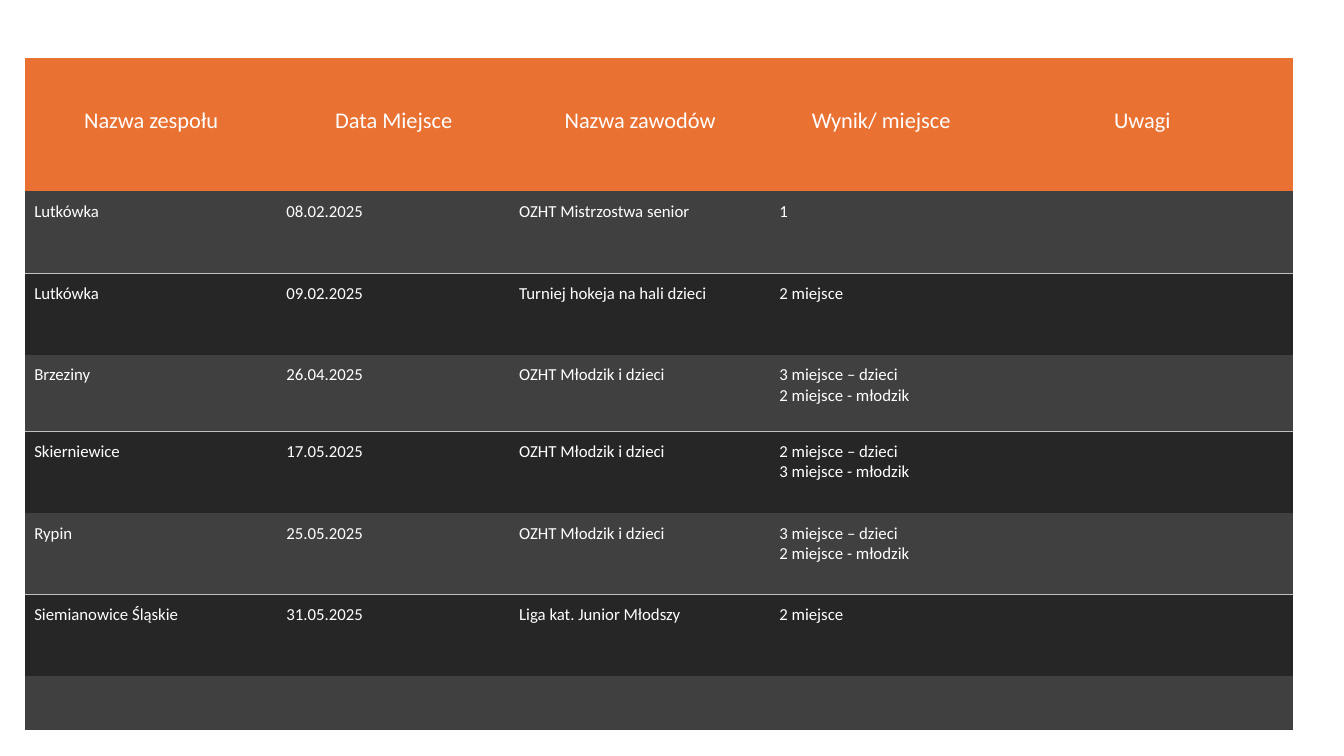
import pptx
import pptx.util
import pptx.dml.color
import pptx.enum.text
import pptx.oxml
import pptx.oxml.ns

Inches = pptx.util.Inches
Pt = pptx.util.Pt
RGBColor = pptx.dml.color.RGBColor
PP_ALIGN = pptx.enum.text.PP_ALIGN
MSO_ANCHOR = pptx.enum.text.MSO_ANCHOR

ORANGE = RGBColor(0xE9, 0x71, 0x32)
GREY = RGBColor(0x40, 0x40, 0x40)
DARK = RGBColor(0x26, 0x26, 0x26)
RULE = RGBColor(0xBF, 0xBF, 0xBF)
WHITE = RGBColor(0xFF, 0xFF, 0xFF)

COL_WIDTHS = [2.5, 2.31, 2.58, 2.2, 2.98]
ROW_HEIGHTS = [1.32, 0.81, 0.81, 0.76, 0.81, 0.81, 0.81, 0.53]
RESULTS = [
    ["Nazwa zespołu", "Data Miejsce", "Nazwa zawodów", "Wynik/ miejsce", "Uwagi"],
    ["Lutkówka", "08.02.2025", "OZHT Mistrzostwa senior", "1", ""],
    ["Lutkówka", "09.02.2025", "Turniej hokeja na hali dzieci", "2 miejsce", ""],
    ["Brzeziny", "26.04.2025", "OZHT Młodzik i dzieci",
     "3 miejsce – dzieci\n2 miejsce - młodzik", ""],
    ["Skierniewice", "17.05.2025", "OZHT Młodzik i dzieci",
     "2 miejsce – dzieci\n3 miejsce - młodzik", ""],
    ["Rypin", "25.05.2025", "OZHT Młodzik i dzieci",
     "3 miejsce – dzieci\n2 miejsce - młodzik", ""],
    ["Siemianowice Śląskie", "31.05.2025", "Liga kat. Junior Młodszy", "2 miejsce", ""],
    [""] * 5,
]

CELL_FORMAT = {
    "margin_left": Inches(0.09), "margin_top": Inches(0.1),
    "margin_right": Inches(0.09), "margin_bottom": Inches(0.19),
}
HEADER_FONT = {"name": "Calibri", "size": Pt(16), "bold": False}
BODY_FONT = {"name": "Calibri", "size": Pt(12), "bold": False}


def apply(obj, values):
    for name, value in values.items():
        setattr(obj, name, value)


def set_borders(cell, ruled_sides):
    """Rule the given sides of a cell and clear the others."""
    tc_pr = cell._tc.get_or_add_tcPr()
    for i, side in enumerate("LRTB"):
        if side in ruled_sides:
            fill = f'<a:solidFill><a:srgbClr val="{RULE}"/></a:solidFill>'
        else:
            fill = "<a:noFill/>"
        tc_pr.insert(i, pptx.oxml.parse_xml(
            f'<a:ln{side} {pptx.oxml.ns.nsdecls("a")} w="{Pt(1)}">{fill}</a:ln{side}>'))


def fill_cell(cell, text, color, font, header):
    apply(cell, CELL_FORMAT)
    cell.vertical_anchor = MSO_ANCHOR.MIDDLE if header else MSO_ANCHOR.TOP
    cell.fill.solid()
    cell.fill.fore_color.rgb = color
    cell.text = text
    for p in cell.text_frame.paragraphs:
        p.alignment = PP_ALIGN.CENTER if header else PP_ALIGN.LEFT
        for r in p.runs:
            apply(r.font, font)
            r.font.color.rgb = WHITE
        if not p.runs:
            # Keeps empty cells from stretching their row
            p._p.append(pptx.oxml.parse_xml(
                f'<a:endParaRPr {pptx.oxml.ns.nsdecls("a")} '
                f'sz="{int(font["size"].pt * 100)}"/>'))


def add_results_table(s, left, top):
    width, height = sum(COL_WIDTHS), sum(ROW_HEIGHTS)
    table = s.shapes.add_table(
        len(ROW_HEIGHTS), len(COL_WIDTHS),
        Inches(left), Inches(top), Inches(width), Inches(height)).table
    for column, w in zip(table.columns, COL_WIDTHS):
        column.width = Inches(w)
    for row, h in zip(table.rows, ROW_HEIGHTS):
        row.height = Inches(h)

    last = len(RESULTS) - 1
    for i, texts in enumerate(RESULTS):
        header = i == 0
        grey = i % 2 == 1
        color = ORANGE if header else GREY if grey else DARK
        font = HEADER_FONT if header else BODY_FONT
        # A rule runs between each grey row and the dark row below it
        sides = "" if i in (0, last) else "B" if grey else "T"
        for j, text in enumerate(texts):
            cell = table.cell(i, j)
            fill_cell(cell, text, color, font, header)
            set_borders(cell, sides)


def main():
    prs = pptx.Presentation()
    prs.slide_width, prs.slide_height = Inches(13.33), Inches(7.5)
    s = prs.slides.add_slide(prs.slide_layouts[6])
    add_results_table(s, 0.25, 0.58)
    prs.save("out.pptx")


if __name__ == "__main__":
    main()
